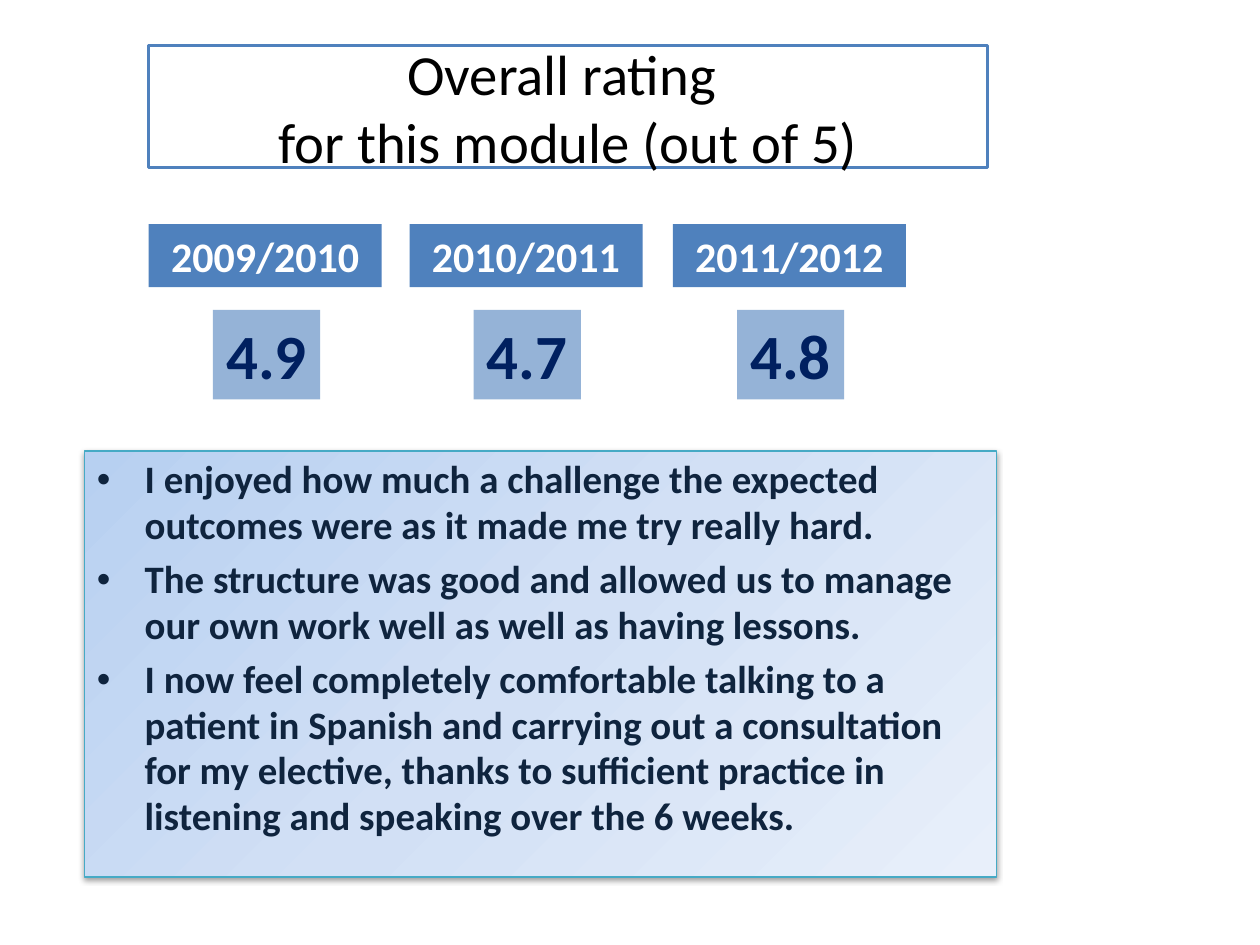
from copy import deepcopy

from lxml.etree import SubElement
from pptx import Presentation
from pptx.dml.color import RGBColor
from pptx.enum.shapes import MSO_SHAPE
from pptx.enum.text import MSO_ANCHOR, PP_ALIGN
from pptx.oxml import parse_xml
from pptx.oxml.ns import nsdecls, qn
from pptx.util import Inches, Pt

COLORS = {
    "white": "FFFFFF", "black": "000000", "blue": "4F81BD", "pale": "95B3D7",
    "navy": "002060", "ink": "0F243E", "teal": "46AAC5",
    "grad_start": "B7D0F1", "grad_mid": "D2E0F5", "grad_end": "E8EFFA",
}
FORMATS = {
    "title": {"size": Pt(32.4), "bold": False, "color": "black"},
    "year": {"size": Pt(24), "bold": True, "color": "white"},
    "score": {"size": Pt(36), "bold": True, "color": "navy"},
    "comment": {"size": Pt(22.2), "bold": True, "color": "ink"},
}
RATINGS = [
    (1.18, "2009/2010", "4.9"),
    (3.25, "2010/2011", "4.7"),
    (5.34, "2011/2012", "4.8"),
]
COMMENTS = [
    "I enjoyed how much a challenge the expected outcomes were as it made me try really hard.",
    "The structure was good and allowed us to manage our own work well as well as having lessons.",
    "I now feel completely comfortable talking to a patient in Spanish and carrying out a "
    "consultation for my elective, thanks to sufficient practice in listening and speaking "
    "over the 6 weeks.",
]


def rgb(name):
    """Return the named colour."""
    return RGBColor.from_string(COLORS[name])


class SlideBuilder:
    """Hold the text style and the current slide."""

    def __init__(self, slide, font="Calibri"):
        """Keep the slide and the font."""
        self.s = slide
        self.font = font

    def box(self, at, fill=None, line=None, width=1):
        """Add a rectangle with an optional fill and outline."""
        sp = self.s.shapes.add_shape(MSO_SHAPE.RECTANGLE, *map(Inches, at))
        sp.shadow.inherit = False
        if fill:
            sp.fill.solid()
            sp.fill.fore_color.rgb = rgb(fill)
        if line:
            sp.line.color.rgb = rgb(line)
            sp.line.width = Pt(width)
        else:
            sp.line.fill.background()
        return sp

    def style(self, p, kind):
        """Apply a text format to the runs of a paragraph."""
        for r in p.runs:
            r.font.name = self.font
            for key, value in FORMATS[kind].items():
                if key == "color":
                    r.font.color.rgb = rgb(value)
                else:
                    setattr(r.font, key, value)

    def label(self, at, text, kind, wrap=False, **look):
        """Add a rectangle with centred text."""
        tf = self.box(at, **look).text_frame
        tf.word_wrap = wrap
        tf.vertical_anchor = MSO_ANCHOR.MIDDLE
        p = tf.paragraphs[0]
        p.text = text
        p.alignment = PP_ALIGN.CENTER
        self.style(p, kind)

    def gradient(self, sp):
        """Give a shape the diagonal three-stop gradient."""
        sp.fill.gradient()
        sp.fill.gradient_angle = 315
        stops = sp._element.spPr.find(qn("a:gradFill")).find(qn("a:gsLst"))
        stops.insert(1, deepcopy(stops[0]))
        names = ("grad_start", "grad_mid", "grad_end")
        for stop, name, position in zip(sp.fill.gradient_stops, names, (0, 0.5, 1)):
            stop.color.rgb = rgb(name)
            stop.position = position

    def shadow(self, sp):
        """Give a shape a soft shadow below it."""
        spPr = sp._element.spPr
        spPr.remove(spPr.find(qn("a:effectLst")))
        spPr.append(parse_xml(
            f'<a:effectLst {nsdecls("a")}><a:outerShdw blurRad="{Pt(3.1)}" dist="{Pt(1.6)}" '
            f'dir="5400000" rotWithShape="0"><a:srgbClr val="{COLORS["black"]}">'
            '<a:alpha val="38000"/></a:srgbClr></a:outerShdw></a:effectLst>'))

    def bullets(self, at, items, kind, **look):
        """Add a shaded panel with a bulleted list."""
        sp = self.box(at, **look)
        self.gradient(sp)
        self.shadow(sp)
        tf = sp.text_frame
        tf.word_wrap = True
        tf.vertical_anchor = MSO_ANCHOR.TOP
        for i, item in enumerate(items):
            p = tf.add_paragraph() if i else tf.paragraphs[0]
            p.text = item
            layout = {"alignment": PP_ALIGN.LEFT, "space_before": Pt(4.8), "line_spacing": 0.98}
            for key, value in layout.items():
                setattr(p, key, value)
            pPr = p._p.get_or_add_pPr()
            pPr.set("marL", str(Inches(0.38)))
            pPr.set("indent", str(Inches(-0.38)))
            SubElement(pPr, qn("a:buFont"), typeface="Arial")
            SubElement(pPr, qn("a:buChar"), char="•")
            self.style(p, kind)


def main():
    """Build the module rating slide."""
    prs = Presentation()
    prs.slide_width, prs.slide_height = Inches(10), Inches(7.5)
    b = SlideBuilder(prs.slides.add_slide(prs.slide_layouts[6]))
    b.label((1.18, 0.36, 6.66, 0.97), "Overall rating \vfor this module (out of 5)", "title",
            wrap=True, fill="white", line="blue", width=2)
    for left, year, score in RATINGS:
        b.label((left, 1.78, 1.85, 0.5), year, "year", fill="blue")
        b.label((left + 0.51, 2.46, 0.85, 0.71), score, "score", fill="pale")
    b.bullets((0.67, 3.58, 7.24, 3.38), COMMENTS, "comment", line="teal", width=0.75)
    prs.save("out.pptx")


if __name__ == "__main__":
    main()
